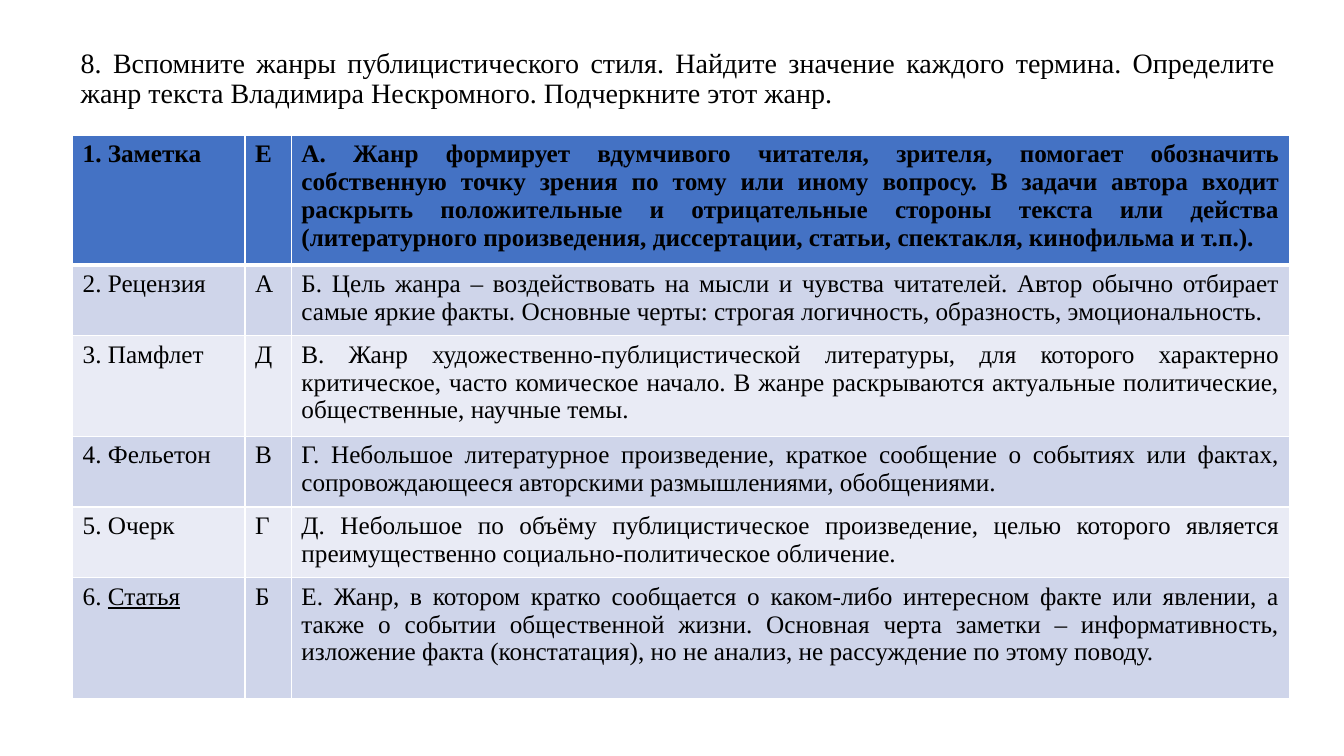
from lxml.etree import SubElement
from pptx import Presentation
from pptx.dml.color import RGBColor
from pptx.enum.text import MSO_ANCHOR, MSO_AUTO_SIZE, PP_ALIGN
from pptx.oxml.ns import qn
from pptx.util import Inches, Pt

TITLE = (
    "8. Вспомните жанры публицистического стиля. Найдите значение каждого термина. "
    "Определите жанр текста Владимира Нескромного. Подчеркните этот жанр."
)
GENRES = [
    ("1. ", "Заметка", "Е",
     "А. Жанр формирует вдумчивого читателя, зрителя, помогает обозначить собственную "
     "точку зрения по тому или иному вопросу. В задачи автора входит раскрыть "
     "положительные и отрицательные стороны текста или действа (литературного "
     "произведения, диссертации, статьи, спектакля, кинофильма и т.п.)."),
    ("2. ", "Рецензия", "А",
     "Б. Цель жанра – воздействовать на мысли и чувства читателей. Автор обычно отбирает "
     "самые яркие факты. Основные черты: строгая логичность, образность, эмоциональность."),
    ("3. ", "Памфлет", "Д",
     "В. Жанр художественно-публицистической литературы, для которого характерно "
     "критическое, часто комическое начало. В жанре раскрываются актуальные "
     "политические, общественные, научные темы."),
    ("4. ", "Фельетон", "В",
     "Г. Небольшое литературное произведение, краткое сообщение о событиях или фактах, "
     "сопровождающееся авторскими размышлениями, обобщениями."),
    ("5. ", "Очерк", "Г",
     "Д. Небольшое по объёму публицистическое произведение, целью которого является "
     "преимущественно социально-политическое обличение."),
    ("6. ", "Статья", "Б",
     "Е. Жанр, в котором кратко сообщается о каком-либо интересном факте или явлении, "
     "а также о событии общественной жизни. Основная черта заметки – информативность, "
     "изложение факта (констатация), но не анализ, не рассуждение по этому поводу."),
]
ANSWER = "Статья"
COLUMN_WIDTHS = (1.71, 0.46, 9.9)
ROW_HEIGHTS = (1.29, 0.7, 1, 0.7, 0.7, 1.2)

FONT = "Times New Roman"
BLACK = RGBColor(0x00, 0x00, 0x00)
WHITE = RGBColor(0xFF, 0xFF, 0xFF)
HEADER_BLUE = RGBColor(0x44, 0x72, 0xC4)
BANDS = (RGBColor(0xE9, 0xEB, 0xF5), RGBColor(0xCF, 0xD5, 0xEA))


def style_paragraph(para, size, bold=False):
    para.alignment = PP_ALIGN.JUSTIFY
    para.font.name = FONT
    para.font.size = Pt(size)
    para.font.bold = bold
    para.font.color.rgb = BLACK


def style_cell(cell, row):
    cell.fill.solid()
    cell.fill.fore_color.rgb = BANDS[row % 2] if row else HEADER_BLUE
    widths = {"lnL": 1, "lnR": 1, "lnT": 3 if row == 1 else 1, "lnB": 1 if row else 3}
    properties = cell._tc.get_or_add_tcPr()
    for position, (side, width) in enumerate(widths.items()):
        line = SubElement(properties, qn(f"a:{side}"), w=str(Pt(width)))
        SubElement(SubElement(line, qn("a:solidFill")), qn("a:srgbClr"), val=str(WHITE))
        properties.insert(position, line)


def add_title(page):
    title = page.shapes.title
    title.left, title.top = Inches(0.7), Inches(0.4)
    title.width, title.height = Inches(12.05), Inches(0.78)
    frame = title.text_frame
    frame.text = TITLE
    frame.word_wrap = True
    frame.auto_size = MSO_AUTO_SIZE.NONE
    frame.vertical_anchor = MSO_ANCHOR.MIDDLE
    para = frame.paragraphs[0]
    style_paragraph(para, 20)
    para.line_spacing = 0.9


def add_genre_table(page):
    table = page.shapes.add_table(
        len(GENRES), len(COLUMN_WIDTHS), Inches(0.72), Inches(1.34),
        Inches(sum(COLUMN_WIDTHS)), Inches(sum(ROW_HEIGHTS)),
    ).table
    for column, width in zip(table.columns, COLUMN_WIDTHS):
        column.width = Inches(width)
    for row, (number, genre, letter, meaning) in enumerate(GENRES):
        table.rows[row].height = Inches(ROW_HEIGHTS[row])
        for column, parts in enumerate(((number, genre), (letter,), (meaning,))):
            cell = table.cell(row, column)
            style_cell(cell, row)
            para = cell.text_frame.paragraphs[0]
            style_paragraph(para, 18, bold=row == 0)
            for part in parts:
                span = para.add_run()
                span.text = part
                if part == ANSWER:
                    span.font.underline = True


def main():
    """Build the slide that matches journalistic genres with their meanings."""
    deck = Presentation()
    deck.slide_width, deck.slide_height = Inches(13.33), Inches(7.5)
    page = deck.slides.add_slide(deck.slide_layouts[5])
    add_title(page)
    add_genre_table(page)
    deck.save("out.pptx")


if __name__ == "__main__":
    main()
